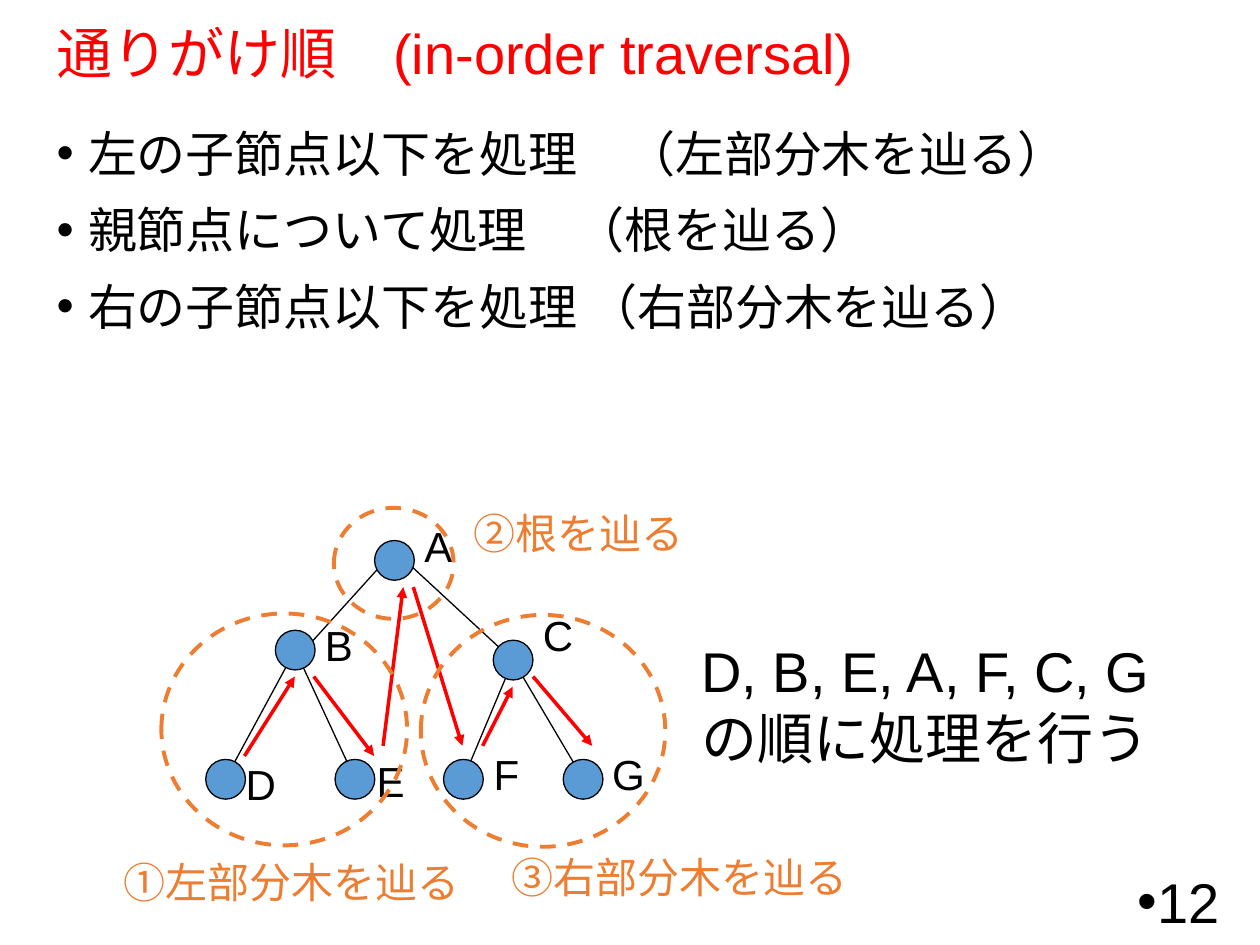
import pptx
import pptx.util
import pptx.dml.color
import pptx.enum.dml
import pptx.enum.shapes
import pptx.enum.text
import pptx.oxml.ns
from dataclasses import dataclass
from lxml import etree

Pt = pptx.util.Pt
RGB = pptx.dml.color.RGBColor
ALIGN = pptx.enum.text.PP_ALIGN
ANCHOR = pptx.enum.text.MSO_ANCHOR
qn = pptx.oxml.ns.qn


@dataclass(frozen=True)
class Theme:
    font: str = "Arial"
    ink: str = "000000"
    red: str = "FF0000"
    node: str = "5B9BD5"
    orange: str = "ED7D31"
    large: int = 32
    body: int = 28
    label: int = 24
    thin: float = 0.75
    arrow: float = 2
    dash: float = 2.25


class Deck:
    """Holds the theme and the current slide; lengths are in points."""

    def __init__(self, prs, theme):
        self.theme = theme
        self.s = prs.slides.add_slide(prs.slide_layouts[5])

    def set_lines(self, tf, lines, size, color, bullet=None, **fmt):
        """Fill a text frame; bullet is the hanging indent, fmt goes to each paragraph."""
        for i, line in enumerate(lines):
            p = tf.paragraphs[0] if i == 0 else tf.add_paragraph()
            r = p.add_run()
            r.text = line
            if bullet is not None:
                pPr = p._p.get_or_add_pPr()
                pPr.set("marL", str(Pt(bullet)))
                pPr.set("indent", str(-Pt(bullet)))
                etree.SubElement(pPr, qn("a:buFont")).set("typeface", self.theme.font)
                etree.SubElement(pPr, qn("a:buChar")).set("char", "•")
            for key, value in fmt.items():
                if key != "space_before" or i > 0:
                    setattr(p, key, value)
            for key, value in {"name": self.theme.font, "size": Pt(size)}.items():
                setattr(r.font, key, value)
            r.font.color.rgb = RGB.from_string(color)

    def title(self, x, y, w, h, text):
        sp = self.s.shapes.title
        place = {"left": x, "top": y, "width": w, "height": h}
        for key, value in place.items():
            setattr(sp, key, Pt(value))
        tf = sp.text_frame
        frame = {"vertical_anchor": ANCHOR.MIDDLE, "word_wrap": True,
                 "auto_size": pptx.enum.text.MSO_AUTO_SIZE.NONE}
        for key, value in frame.items():
            setattr(tf, key, value)
        self.set_lines(tf, [text], self.theme.large, self.theme.red,
                       alignment=ALIGN.LEFT, line_spacing=0.9)

    def text(self, x, y, w, h, lines, size, color=None, wrap=False,
             anchor=ANCHOR.TOP, **fmt):
        tf = self.s.shapes.add_textbox(Pt(x), Pt(y), Pt(w), Pt(h)).text_frame
        tf.word_wrap = wrap
        tf.vertical_anchor = anchor
        self.set_lines(tf, lines, size, color or self.theme.ink, **fmt)

    def ellipse(self, x, y, w, h, line, width, fill=None, dash=None):
        sp = self.s.shapes.add_shape(pptx.enum.shapes.MSO_SHAPE.OVAL,
                                     Pt(x), Pt(y), Pt(w), Pt(h))
        sp.shadow.inherit = False
        if fill:
            sp.fill.solid()
            sp.fill.fore_color.rgb = RGB.from_string(fill)
        else:
            sp.fill.background()
        sp.line.color.rgb = RGB.from_string(line)
        sp.line.width = Pt(width)
        sp.line.dash_style = dash

    def line(self, x1, y1, x2, y2, color, width, arrow=False):
        c = self.s.shapes.add_connector(pptx.enum.shapes.MSO_CONNECTOR.STRAIGHT,
                                        Pt(x1), Pt(y1), Pt(x2), Pt(y2))
        c.line.color.rgb = RGB.from_string(color)
        c.line.width = Pt(width)
        spPr = c._element.spPr
        if arrow:
            etree.SubElement(spPr.find(qn("a:ln")), qn("a:tailEnd")).set("type", "triangle")
        etree.SubElement(spPr, qn("a:effectLst"))


def main():
    prs = pptx.Presentation()
    prs.slide_width, prs.slide_height = Pt(720), Pt(540)
    t = Theme()
    d = Deck(prs, t)

    # Title, rules and page number
    d.title(25.2, 13.7, 666, 36.7, "通りがけ順　(in-order traversal)")
    d.text(25.2, 67, 666, 420, [
        "左の子節点以下を処理　（左部分木を辿る）",
        "親節点について処理　（根を辿る）",
        "右の子節点以下を処理 （右部分木を辿る）",
    ], t.body, wrap=True, bullet=18, space_before=Pt(10))
    d.text(542, 500.4, 162, 28.8, ["12"], t.large, wrap=True,
           anchor=ANCHOR.MIDDLE, bullet=0, alignment=ALIGN.RIGHT)

    # Tree edges, drawn under the nodes
    for edge in [(225.4, 314.6, 168.7, 377.3), (225.4, 314.6, 293.2, 377.3),
                 (168.7, 371.5, 128.9, 445), (168.7, 371.5, 202.8, 445),
                 (293.2, 377.3, 264.8, 445), (293.2, 377.3, 333.2, 445)]:
        d.line(*edge, t.ink, t.thin)

    # Nodes: centre, then the corner of the label
    diameter = 22.7
    nodes = {
        "A": (225.4, 320.2, 235.4, 293.8), "B": (168.7, 371.5, 178.6, 350.6),
        "C": (293.2, 377.2, 303.1, 344.9), "D": (128.9, 445.3, 133.2, 429.8),
        "E": (202.8, 445.3, 208.1, 428.4), "F": (264.8, 445.3, 275, 424.1),
        "G": (333.2, 445.3, 342.7, 424.1),
    }
    for name, (cx, cy, label_x, label_y) in nodes.items():
        d.ellipse(cx - diameter / 2, cy - diameter / 2, diameter, diameter,
                  t.ink, t.thin, fill=t.node)
        d.text(label_x, label_y, 31.5, 36.4, [name], t.label)

    # Resulting order
    d.text(393.8, 360, 272.9, 85, ["D, B, E, A, F, C, G", "の順に処理を行う"], t.large)

    # Traversal arrows
    for step in [(139.7, 432, 168.5, 386.6), (179.3, 386.6, 213.8, 432),
                 (218.9, 426.2, 230.4, 335.5), (236.2, 335.5, 264.2, 426.2),
                 (275.8, 426.2, 293, 392.4), (304.6, 386.6, 338.4, 426.2)]:
        d.line(*step, t.red, t.arrow, arrow=True)

    # Dashed regions with their captions
    regions = [
        ((92.2, 350.6, 140.4, 132.5), (63.4, 486, 208), "①左部分木を辿る"),
        ((190.8, 290.2, 68.4, 63.4), (263.5, 286.6, 135.4), "②根を辿る"),
        ((240.5, 351.4, 139.7, 132.5), (285.1, 483.1, 208), "③右部分木を辿る"),
    ]
    for ring, (x, y, w), caption in regions:
        d.ellipse(*ring, t.orange, t.dash, dash=pptx.enum.dml.MSO_LINE.DASH)
        d.text(x, y, w, 36, [caption], t.label, t.orange)

    prs.save("out.pptx")


if __name__ == "__main__":
    main()
